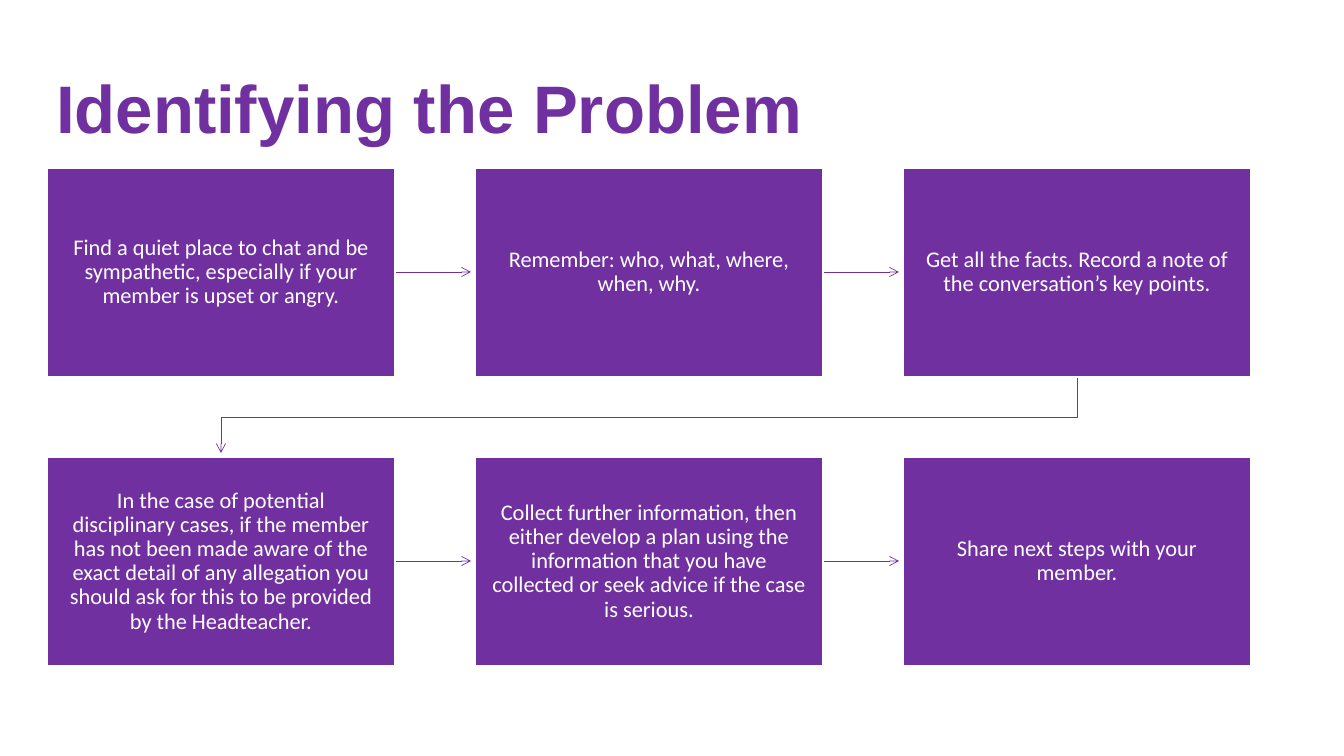
from lxml.etree import SubElement as Sub
from pptx import Presentation
from pptx.dml.color import RGBColor
from pptx.enum.shapes import MSO_CONNECTOR as Link, MSO_SHAPE as Shape
from pptx.enum.text import MSO_ANCHOR as Anchor, MSO_AUTO_SIZE as Fit, PP_ALIGN as Align
from pptx.oxml.ns import qn
from pptx.util import Emu, Pt

SCALE = 914400 / 100.8
WIDTH, HEIGHT = 348, 209
LEFT, TOP = 47, 168
ACROSS, DOWN = 428, 289
STEPS = [
    ["Find a quiet place to chat and be sympathetic, especially if your member is upset or angry.",
     "Remember: who, what, where, when, why.",
     "Get all the facts. Record a note of the conversation’s key points."],
    ["In the case of potential disciplinary cases, if the member has not been made aware of the "
     "exact detail of any allegation you should ask for this to be provided by the Headteacher.",
     "Collect further information, then either develop a plan using the information that you have "
     "collected or seek advice if the case is serious.",
     "Share next steps with your member."],
]


def px(count):
    return Emu(round(count * SCALE))


def tint(code):
    return RGBColor.from_string(code)


class Deck:
    """Holds the style and the current slide, and draws each kind of element."""

    purple, white = "7030A0", "FFFFFF"

    def __init__(self):
        self.show = Presentation()
        self.show.slide_width, self.show.slide_height = px(1344), px(756)
        self.slide = self.show.slides.add_slide(self.show.slide_layouts[5])
        self.shapes = self.slide.shapes

    def label(self, frame, text, face, size, color, align, bold=False):
        frame.word_wrap = True
        frame.auto_size = Fit.NONE
        para = frame.paragraphs[0]
        para.text = text
        para.alignment = align
        para.line_spacing = 0.9
        font = para.font
        font.name, font.size, font.bold = face, Pt(size), bold
        font.color.rgb = tint(color)

    def title(self, text, left, top, width, height):
        title = self.shapes.title
        title.left, title.top = px(left), px(top)
        title.width, title.height = px(width), px(height)
        self.label(title.text_frame, text, "Arial", 48, self.purple, Align.LEFT, True)
        title.text_frame.vertical_anchor = Anchor.BOTTOM

    def box(self, text, left, top):
        box = self.shapes.add_shape(Shape.RECTANGLE, px(left), px(top), px(WIDTH), px(HEIGHT))
        box.shadow.inherit = False
        box.fill.solid()
        box.fill.fore_color.rgb = tint(self.purple)
        box.line.color.rgb = tint(self.white)
        box.line.width = Pt(1)
        frame = box.text_frame
        frame.margin_left = frame.margin_right = px(17)
        frame.margin_top = frame.margin_bottom = px(18)
        frame.vertical_anchor = Anchor.MIDDLE
        self.label(frame, text, "Calibri", 16, self.white, Align.CENTER)

    def point(self, line):
        line.line.color.rgb = tint(self.purple)
        line.line.width = Pt(0.5)
        Sub(line.get_or_add_ln(), qn("a:tailEnd"), type="arrow")
        Sub(line.element.spPr, qn("a:effectLst"))

    def arrow(self, start, end, level):
        ends = [px(spot) for spot in (start, level, end, level)]
        self.point(self.shapes.add_connector(Link.STRAIGHT, *ends))

    def bend(self, *spots):
        first, *rest = [(px(x), px(y)) for x, y in spots]
        pen = self.shapes.build_freeform(*first)
        pen.add_line_segments(rest, close=False)
        line = pen.convert_to_shape()
        line.fill.background()
        self.point(line)

    def save(self):
        self.show.save("out.pptx")


def main():
    deck = Deck()
    deck.title("Identifying the Problem", 46, 54, 1206, 99)
    first = LEFT + WIDTH // 2
    last = first + 2 * ACROSS
    deck.bend((last, TOP + HEIGHT), (last, 417), (first, 417), (first, TOP + DOWN - 4))
    for row, texts in enumerate(STEPS):
        top = TOP + row * DOWN
        for col, text in enumerate(texts):
            left = LEFT + col * ACROSS
            if col < len(texts) - 1:
                deck.arrow(left + WIDTH, left + ACROSS - 4, top + HEIGHT // 2)
            deck.box(text, left, top)
    deck.save()


if __name__ == "__main__":
    main()
